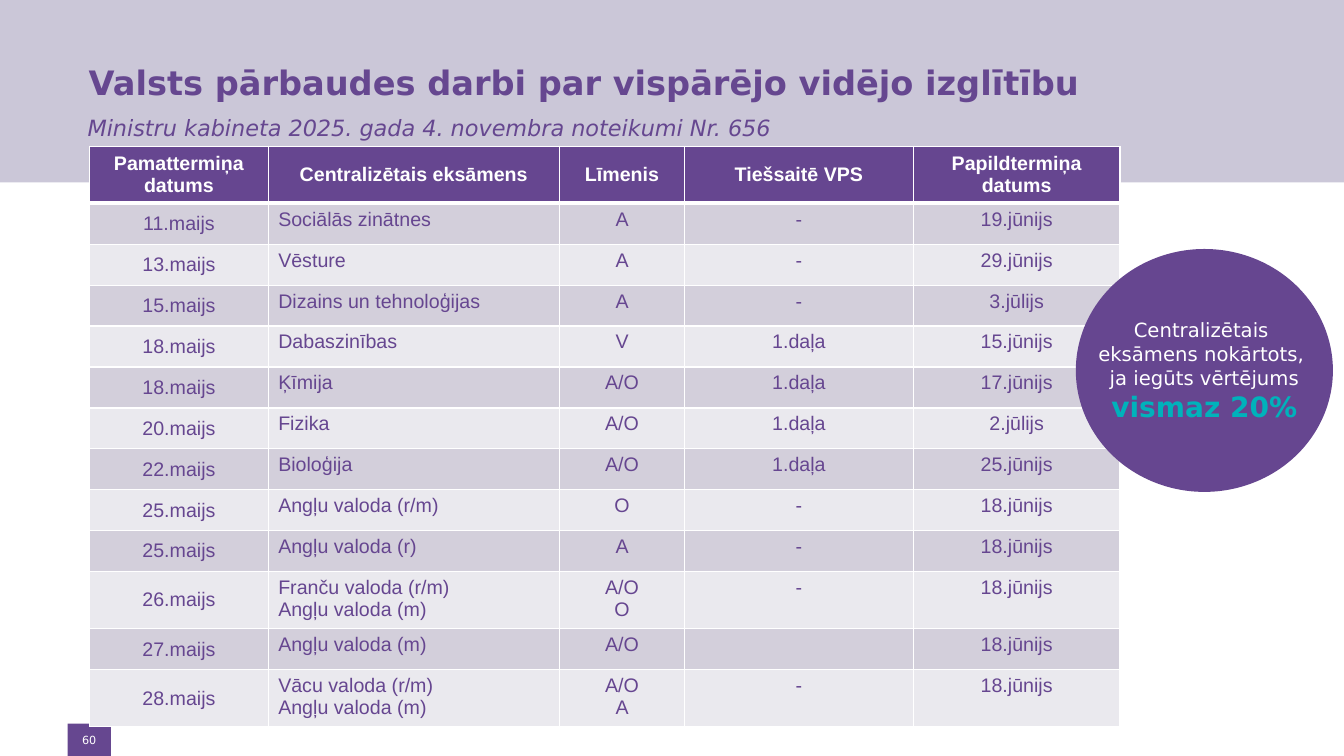
from lxml import etree
from pptx import Presentation, util as u
from pptx.dml.color import RGBColor
from pptx.enum import shapes, text
from pptx.oxml import ns

PURPLE, TABLE_PURPLE, LILAC = "664790", "664690", "CBC7D8"
WHITE, TEAL = "FFFFFF", "00B2BB"
BANDS = ("D3CFDB", "EAE9EE")
SANS, TABLE_FONT = "DejaVu Sans", "Arial"
CENTER, LEFT = text.PP_ALIGN.CENTER, text.PP_ALIGN.LEFT
MIDDLE, TOP = text.MSO_ANCHOR.MIDDLE, text.MSO_ANCHOR.TOP

HEADINGS = ("Pamattermiņa datums", "Centralizētais eksāmens", "Līmenis",
            "Tiešsaitē VPS", "Papildtermiņa datums")
EXAMS = (
    ("11.maijs", "Sociālās zinātnes", "A", "-", "19.jūnijs"),
    ("13.maijs", "Vēsture", "A", "-", "29.jūnijs"),
    ("15.maijs", "Dizains un tehnoloģijas", "A", "-", "3.jūlijs"),
    ("18.maijs", "Dabaszinības", "V", "1.daļa", "15.jūnijs"),
    ("18.maijs", "Ķīmija", "A/O", "1.daļa", "17.jūnijs"),
    ("20.maijs", "Fizika", "A/O", "1.daļa", "2.jūlijs"),
    ("22.maijs", "Bioloģija", "A/O", "1.daļa", "25.jūnijs"),
    ("25.maijs", "Angļu valoda (r/m)", "O", "-", "18.jūnijs"),
    ("25.maijs", "Angļu valoda (r)", "A", "-", "18.jūnijs"),
    ("26.maijs", "Franču valoda (r/m)\nAngļu valoda (m)", "A/O\nO", "-", "18.jūnijs"),
    ("27.maijs", "Angļu valoda (m)", "A/O", "", "18.jūnijs"),
    ("28.maijs", "Vācu valoda (r/m)\nAngļu valoda (m)", "A/O\nA", "-", "18.jūnijs"),
)
COLUMN_WIDTHS = (1.77, 2.89, 1.24, 2.27, 2.05)


def rgb(color):
    return RGBColor.from_string(color)


def write(frame, words, size=14, color=WHITE, font=SANS, bold=False,
          italic=False, align=LEFT):
    """Add one paragraph per line, starting with the empty first one."""
    for line in words.split("\n"):
        first = frame.paragraphs[0]
        paragraph = frame.add_paragraph() if first.runs else first
        paragraph.alignment = align
        run = paragraph.add_run()
        run.text = line
        run.font.size, run.font.name = u.Pt(size), font
        run.font.bold, run.font.italic = bold, italic
        run.font.color.rgb = rgb(color)


def add_filled(slide, kind, box, color):
    shape = slide.shapes.add_shape(kind, *map(u.Inches, box))
    shape.shadow.inherit = False
    shape.fill.solid()
    shape.fill.fore_color.rgb = rgb(color)
    shape.line.fill.background()
    return shape


def add_frame(slide, box, anchor=TOP, insets=(0.1, 0.05, 0.1, 0.05)):
    frame = slide.shapes.add_textbox(*map(u.Inches, box)).text_frame
    frame.word_wrap = True
    frame.vertical_anchor = anchor
    (frame.margin_left, frame.margin_top,
     frame.margin_right, frame.margin_bottom) = map(u.Inches, insets)
    return frame


def set_borders(cell, bottom):
    """Draw white cell edges, with the bottom one of the given width."""
    properties = cell._tc.get_or_add_tcPr()
    for index, (side, points) in enumerate(
            (("L", 1), ("R", 1), ("T", 1), ("B", bottom))):
        edge = etree.Element(ns.qn(f"a:ln{side}"), w=str(u.Pt(points)))
        fill = etree.SubElement(edge, ns.qn("a:solidFill"))
        etree.SubElement(fill, ns.qn("a:srgbClr"), val=WHITE)
        properties.insert(index, edge)


def add_header(slide, left, top, width, height):
    add_filled(slide, shapes.MSO_SHAPE.RECTANGLE, (left, top, width, height), LILAC)
    title = add_frame(slide, (left + 0.88, top + 0.37, 11.62, 0.89),
                      MIDDLE, (0, 0.05, 0.1, 0.05))
    write(title, "Valsts pārbaudes darbi par vispārējo vidējo izglītību",
          size=24, color=PURPLE, bold=True)
    regulation = add_frame(slide, (left + 0.77, top + 1.08, 7.69, 0.37))
    write(regulation, "Ministru kabineta 2025. gada 4. novembra noteikumi Nr. 656",
          size=16, color=PURPLE, italic=True)


def add_exam_table(slide, left, top, width, height):
    rows = (HEADINGS,) + EXAMS
    table = slide.shapes.add_table(len(rows), len(HEADINGS), *map(
        u.Inches, (left, top, width, height))).table
    for column, column_width in zip(table.columns, COLUMN_WIDTHS):
        column.width = u.Inches(column_width)
    for row_index, row in enumerate(rows):
        heading = row_index == 0
        fill = TABLE_PURPLE if heading else BANDS[(row_index - 1) % 2]
        for column_index, words in enumerate(row):
            cell = table.cell(row_index, column_index)
            cell.fill.solid()
            cell.fill.fore_color.rgb = rgb(fill)
            cell.vertical_anchor = MIDDLE if heading or column_index == 0 else TOP
            set_borders(cell, bottom=3 if heading else 1)
            write(cell.text_frame, words, font=TABLE_FONT, bold=heading,
                  color=WHITE if heading else TABLE_PURPLE,
                  align=LEFT if column_index == 1 and not heading else CENTER)


def add_pass_mark(slide, left, top, width, height):
    add_filled(slide, shapes.MSO_SHAPE.OVAL, (left, top, width, height), TABLE_PURPLE)
    pass_mark = add_frame(slide, (left, top + 0.64, width, 1.14))
    write(pass_mark, "Centralizētais \neksāmens nokārtots, \nja iegūts vērtējums",
          align=CENTER)
    write(pass_mark, "vismaz 20%", size=20, color=TEAL, bold=True, align=CENTER)


def add_page_number(slide, *box):
    add_filled(slide, shapes.MSO_SHAPE.RECTANGLE, box, PURPLE)
    write(add_frame(slide, box, MIDDLE, (0.04,) * 4), "60", size=8, align=CENTER)


def main():
    deck = Presentation()
    deck.slide_width, deck.slide_height = u.Inches(13.33), u.Inches(7.5)
    slide = deck.slides.add_slide(deck.slide_layouts[6])
    add_page_number(slide, 0.67, 7.18, 0.43, 0.32)
    add_header(slide, 0, 0, 13.33, 1.81)
    add_exam_table(slide, 0.89, 1.45, sum(COLUMN_WIDTHS), 5.28)
    add_pass_mark(slide, 10.67, 2.47, 2.55, 2.41)
    deck.save("out.pptx")


if __name__ == "__main__":
    main()
